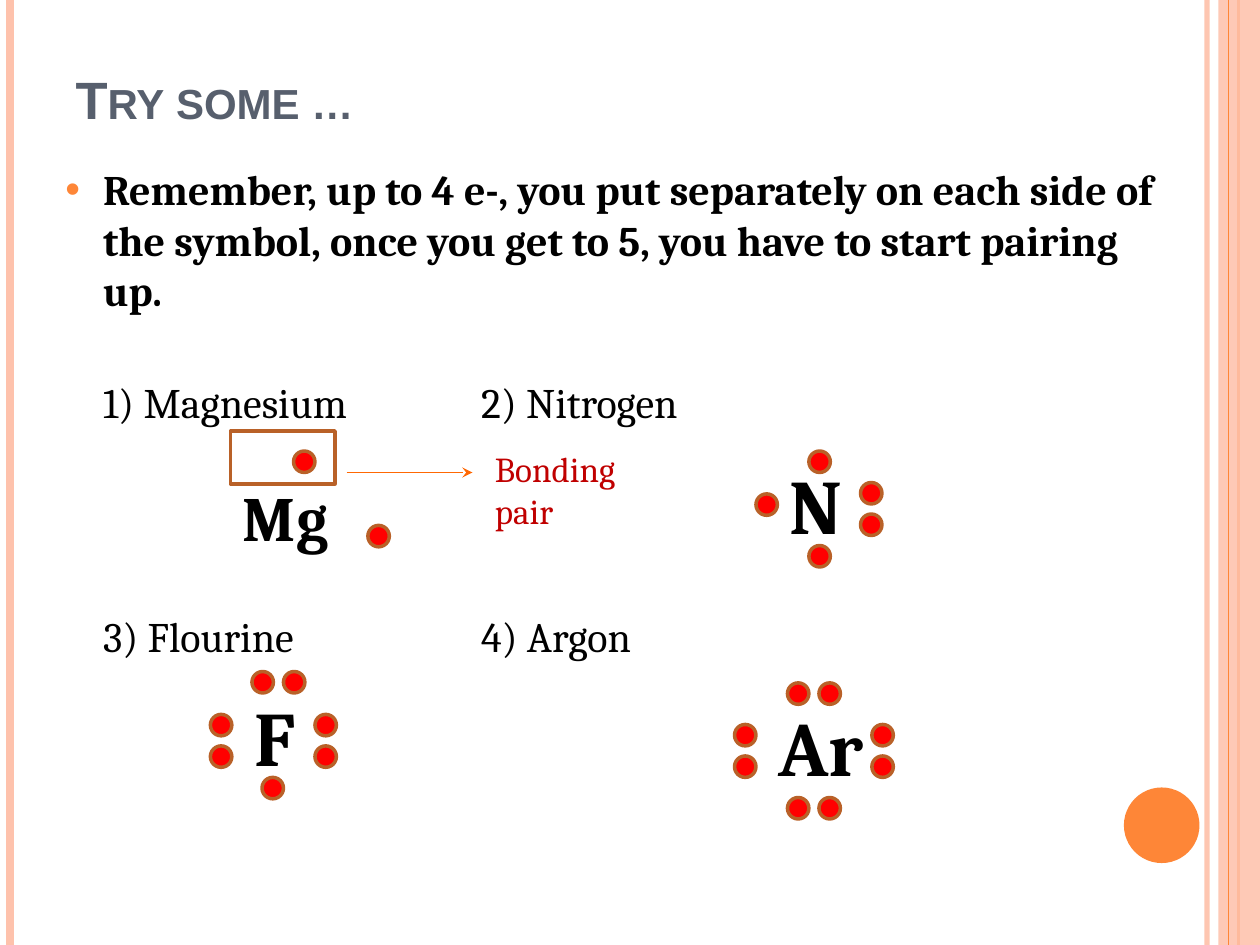
"""Build the Lewis dot diagram practice slide."""
from lxml.etree import SubElement
from pptx import Presentation
from pptx.dml.color import RGBColor
from pptx.enum.shapes import MSO_CONNECTOR, MSO_SHAPE
from pptx.enum.text import MSO_ANCHOR, PP_ALIGN
from pptx.oxml.ns import qn
from pptx.util import Inches, Pt

ORANGE, PEACH, BROWN, RED = "FE8637", "FEC2AC", "B96128", "FF0000"
BLACK, SLATE, CRIMSON, ARROW = "000000", "575F6D", "C00000", "FF6803"
DOT = 0.17


def rgb(color):
    return RGBColor.from_string(color)


def set_opacity(element, percent):
    color = next(element.iter(qn("a:srgbClr")))
    SubElement(color, qn("a:alpha"), val=str(percent * 1000))


class SlideBuilder:
    def __init__(self, slide, font="Cambria"):
        self.slide = slide
        self.font = font

    def style(self, paragraph, size, color=BLACK, bold=False, font=None):
        paragraph.alignment = PP_ALIGN.LEFT
        face = paragraph.font
        face.name = font or self.font
        face.size, face.bold = Pt(size), bold
        face.color.rgb = rgb(color)

    def title(self, text, box):
        title = self.slide.shapes.title
        title.left, title.top, title.width, title.height = map(Inches, box)
        title.text_frame.vertical_anchor = MSO_ANCHOR.BOTTOM
        title.text_frame.text = text
        heading = title.text_frame.paragraphs[0]
        self.style(heading, 30, SLATE, True, "Arial")
        heading._p.pPr.find(qn("a:defRPr")).set("cap", "small")

    def text(self, text, box, size, color=BLACK, bold=False):
        frame = self.slide.shapes.add_textbox(*map(Inches, box)).text_frame
        frame.word_wrap = True
        frame.text = text
        self.style(frame.paragraphs[0], size, color, bold)
        return frame

    def indent(self, paragraph, margin, first_line=0):
        properties = paragraph._p.get_or_add_pPr()
        properties.set("marL", str(Inches(margin)))
        properties.set("indent", str(Inches(first_line)))
        return properties

    def bullet_text(self, text, box, size, labels):
        frame = self.text("", box, size)
        reminder = frame.paragraphs[0]
        reminder.text = text
        properties = self.indent(reminder, 0.3, -0.3)
        properties.clear_content() if hasattr(properties, "clear_content") else None
        for child in list(properties):
            properties.remove(child)
        bullet_color = SubElement(properties, qn("a:buClr"))
        SubElement(bullet_color, qn("a:srgbClr"), val=ORANGE)
        SubElement(properties, qn("a:buFont"), typeface="Arial")
        SubElement(properties, qn("a:buChar"), char="•")
        self.style(reminder, size, bold=True)
        for label, gap in labels:
            row = frame.add_paragraph()
            row.text = label
            row.space_before = Pt(gap)
            self.indent(row, 0.3)
            self.style(row, size)

    def shape(self, kind, box, fill=None, line=None, opacity=None):
        shape = self.slide.shapes.add_shape(kind, *map(Inches, box))
        shape.shadow.inherit = False
        if fill:
            shape.fill.solid()
            shape.fill.fore_color.rgb = rgb(fill)
        else:
            shape.fill.background()
        if opacity:
            set_opacity(shape._element.spPr, opacity)
        if line:
            shape.line.color.rgb = rgb(line)
            shape.line.width = Pt(2)
        else:
            shape.line.fill.background()

    def line(self, start, end, color, width, opacity=None, arrow=False):
        line = self.slide.shapes.add_connector(
            MSO_CONNECTOR.STRAIGHT, *map(Inches, (*start, *end)))
        line.line.color.rgb = rgb(color)
        line.line.width = Pt(width)
        if opacity:
            set_opacity(line._element.spPr, opacity)
        if arrow:
            SubElement(line.line._get_or_add_ln(), qn("a:tailEnd"), type="stealth")
        SubElement(line._element.spPr, qn("a:effectLst"))

    def rule(self, x, color, width, opacity=None):
        self.line((x, 0), (x, 7.5), color, width, opacity)

    def atom(self, symbol, box, size, electrons):
        self.text(symbol, box, size, bold=True)
        for x, y in electrons:
            self.shape(MSO_SHAPE.OVAL, (x, y, DOT, DOT), RED, BROWN)


def main():
    deck = Presentation()
    deck.slide_width, deck.slide_height = Inches(10), Inches(7.5)
    page = SlideBuilder(deck.slides.add_slide(deck.slide_layouts[5]))

    page.rule(9.58, PEACH, 3, 93)
    page.rule(0.08, PEACH, 4.5)
    page.rule(9.83, ORANGE, 1.5)
    page.shape(MSO_SHAPE.RECTANGLE, (9.67, 0, 0.33, 7.5), PEACH, opacity=87)
    page.rule(9.75, ORANGE, 0.75)
    page.shape(MSO_SHAPE.OVAL, (8.92, 6.25, 0.6, 0.6), ORANGE)

    page.title("Try some …", (0.5, 0, 9, 1.08))
    page.bullet_text(
        "Remember, up to 4 e-, you put separately on each side of the symbol, "
        "once you get to 5, you have to start pairing up.",
        (0.42, 1.25, 9, 5.67), 24,
        [("1) Magnesium\t\t\t2) Nitrogen", 35), ("3) Flourine\t\t\t4) Argon", 105)])

    atoms = [
        ("Mg", (1.83, 3.75, 1.08, 0.71), 36, [(2.33, 3.58), (2.92, 4.17)]),
        ("N", (6.17, 3.58, 1.08, 0.84), 44,
         [(6.42, 3.58), (6.42, 4.33), (6, 3.92), (6.83, 3.83), (6.83, 4.08)]),
        ("F", (1.92, 5.42, 0.67, 0.84), 44,
         [(2, 5.33), (2.25, 5.33), (2.08, 6.17)]
         + [(x, y) for x in (1.67, 2.5) for y in (5.67, 5.92)]),
        ("Ar", (6.08, 5.5, 1.08, 0.84), 44,
         [(x, y) for x in (6.25, 6.5) for y in (5.42, 6.33)]
         + [(x, y) for x in (5.83, 6.92) for y in (5.75, 6)]),
    ]
    for atom in atoms:
        page.atom(*atom)

    page.shape(MSO_SHAPE.RECTANGLE, (1.83, 3.42, 0.83, 0.42), line=BROWN)
    page.line((2.75, 3.75), (3.75, 3.75), ARROW, 1, arrow=True)
    page.text("Bonding pair", (3.83, 3.5, 1.33, 0.77), 20, CRIMSON)
    deck.save("out.pptx")


if __name__ == "__main__":
    main()
